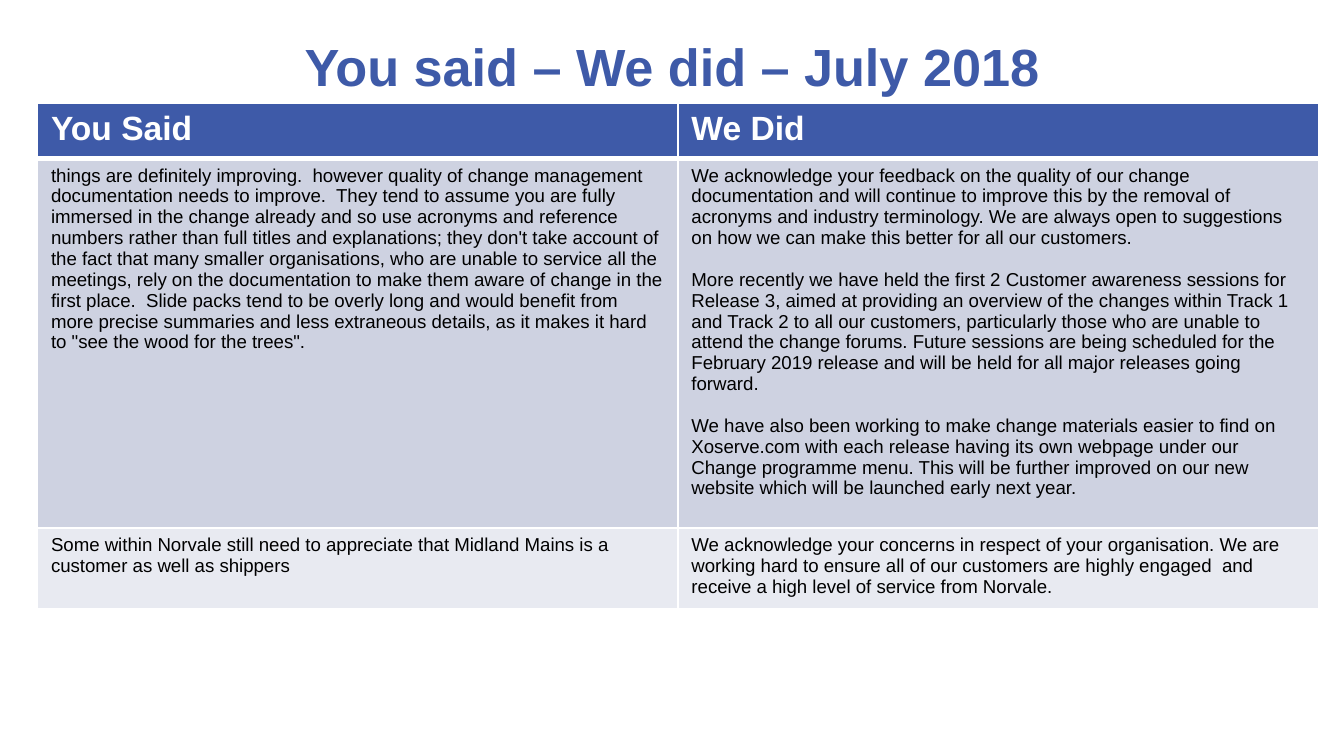
from lxml import etree
from pptx import Presentation
from pptx.dml.color import RGBColor
from pptx.enum.text import MSO_ANCHOR, PP_ALIGN
from pptx.oxml.ns import qn
from pptx.util import Inches, Pt

CENTER = PP_ALIGN.CENTER
MIDDLE = MSO_ANCHOR.MIDDLE
FONT = "Arial"
BLUE, WHITE, BLACK = "3E5AA8", "FFFFFF", "000000"

# Content: each cell is a list of paragraphs
TITLE = "You said – We did – July 2018"
ROWS = [
    (["You Said"], ["We Did"]),
    (
        ["things are definitely improving.  however quality of change management "
         "documentation needs to improve.  They tend to assume you are fully immersed "
         "in the change already and so use acronyms and reference numbers rather than "
         "full titles and explanations; they don't take account of the fact that many "
         "smaller organisations, who are unable to service all the meetings, rely on "
         "the documentation to make them aware of change in the first place.  Slide "
         "packs tend to be overly long and would benefit from more precise summaries "
         "and less extraneous details, as it makes it hard to \"see the wood for the "
         "trees\"."],
        ["We acknowledge your feedback on the quality of our change documentation and "
         "will continue to improve this by the removal of acronyms and industry "
         "terminology. We are always open to suggestions on how we can make this "
         "better for all our customers.",
         "More recently we have held the first 2 Customer awareness sessions for "
         "Release 3, aimed at providing an overview of the changes within Track 1 and "
         "Track 2 to all our customers, particularly those who are unable to attend "
         "the change forums. Future sessions are being scheduled for the February "
         "2019 release and will be held for all major releases going forward.",
         "We have also been working to make change materials easier to find on "
         "Xoserve.com with each release having its own webpage under our Change "
         "programme menu. This will be further improved on our new website which will "
         "be launched early next year."],
    ),
    (
        ["Some within Norvale still need to appreciate that Midland Mains is a "
         "customer as well as shippers"],
        ["We acknowledge your concerns in respect of your organisation. We are working "
         "hard to ensure all of our customers are highly engaged  and receive a high "
         "level of service from Norvale."],
    ),
]
# Per row: fill, text size, text colour, bold, bottom border
ROW_STYLES = [
    (BLUE, 18, WHITE, True, 3),
    ("CED2E1", 10, BLACK, False, 1),
    ("E8EAF1", 10, BLACK, False, 1),
]
SLIDE_WIDTH = 10
TABLE_LEFT, TABLE_TOP, TABLE_WIDTH, TABLE_HEIGHT = 0.28, 0.77, 9.53, 3.77
ROW_HEIGHT = 0.41  # minimum; rows grow with their text
PARAGRAPH_GAP = 11.2


def color(value):
    return RGBColor.from_string(value)


def style_paragraph(paragraph, size, text_color, bold):
    font = paragraph.font
    font.name, font.size, font.bold = FONT, Pt(size), bold
    font.color.rgb = color(text_color)


def add_borders(cell, bottom):
    properties = cell._tc.get_or_add_tcPr()
    for side, width in (("L", 1), ("R", 1), ("T", 1), ("B", bottom)):
        line = etree.SubElement(properties, qn("a:ln" + side), w=str(Pt(width)))
        fill = etree.SubElement(line, qn("a:solidFill"))
        etree.SubElement(fill, qn("a:srgbClr"), val=WHITE)


def fill_cell(cell, texts, style):
    fill, size, text_color, bold, bottom = style
    add_borders(cell, bottom)
    cell.fill.solid()
    cell.fill.fore_color.rgb = color(fill)
    frame = cell.text_frame
    for index, text in enumerate(texts):
        paragraph = frame.add_paragraph() if index else frame.paragraphs[0]
        paragraph.text = text
        style_paragraph(paragraph, size, text_color, bold)
        if index:
            paragraph.space_before = Pt(PARAGRAPH_GAP)


# Widescreen 16:9 slide
presentation = Presentation()
presentation.slide_width = Inches(SLIDE_WIDTH)
presentation.slide_height = Inches(SLIDE_WIDTH * 9 / 16)
slide = presentation.slides.add_slide(presentation.slide_layouts[6])

# Title
title = slide.shapes.add_textbox(Inches(0.5), Inches(0.14), Inches(9), Inches(0.7))
title.text_frame.word_wrap = True
title.text_frame.vertical_anchor = MIDDLE
heading = title.text_frame.paragraphs[0]
heading.text = TITLE
heading.alignment = CENTER
style_paragraph(heading, 28, BLUE, True)

# Feedback table
table_frame = slide.shapes.add_table(
    len(ROWS), len(ROWS[0]), Inches(TABLE_LEFT), Inches(TABLE_TOP),
    Inches(TABLE_WIDTH), Inches(TABLE_HEIGHT),
)
table = table_frame.table
for row, cells, style in zip(table.rows, ROWS, ROW_STYLES):
    row.height = Inches(ROW_HEIGHT)
    for cell, texts in zip(row.cells, cells):
        fill_cell(cell, texts, style)
table_frame.height = Inches(TABLE_HEIGHT)

presentation.save("out.pptx")
